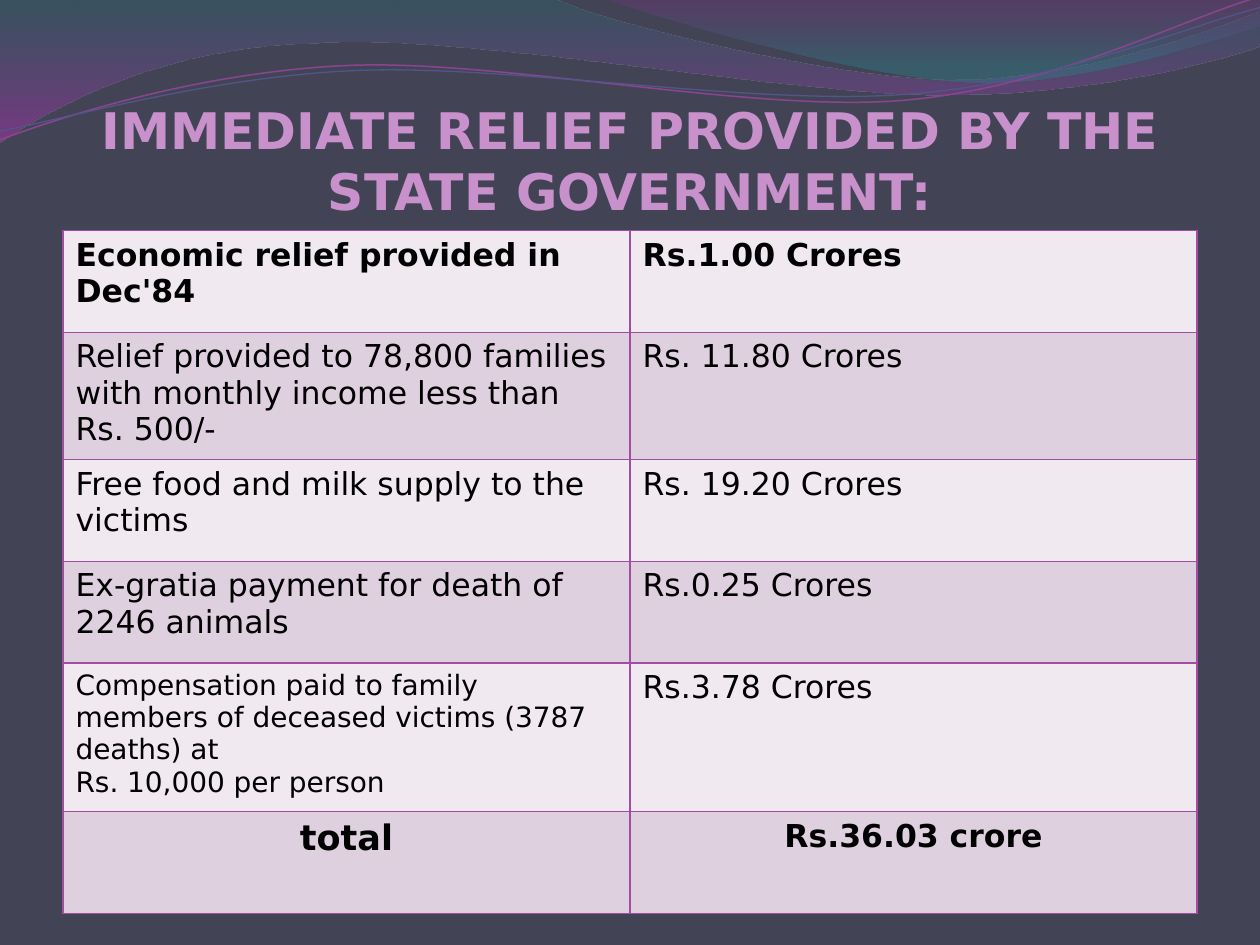
"""Build a slide with a table of the relief paid by the state government."""
from lxml.etree import SubElement
from pptx import Presentation
from pptx.dml.color import RGBColor
from pptx.enum.text import MSO_ANCHOR as Anchor, MSO_AUTO_SIZE as AutoSize, PP_ALIGN as Align
from pptx.oxml.ns import qn
from pptx.util import Inches, Pt

THEME = dict(
    font="DejaVu Sans", background="424456", title="C991CB", text="000000",
    border="A04DA3", bands=("F0E9F0", "DFD0E0"),
    title_size=28.8, body_size=18, small_size=16, total_size=20,
)
TITLE = "IMMEDIATE RELIEF PROVIDED BY THE STATE GOVERNMENT:"
RELIEF = [
    ("Economic relief provided in Dec'84", "Rs.1.00 Crores"),
    ("Relief provided to 78,800 families with monthly income less than Rs. 500/-", "Rs. 11.80 Crores"),
    ("Free food and milk supply to the victims", "Rs. 19.20 Crores"),
    ("Ex-gratia payment for death of 2246 animals", "Rs.0.25 Crores"),
    ("Compensation paid to family members of deceased victims (3787 deaths) at \vRs. 10,000 per person",
     "Rs.3.78 Crores"),
    ("total", "Rs.36.03 crore"),
]
TABLE_HEIGHT = 5.42
TALL_ROWS = {1: 1.01, 4: 1.18}
FIRST_COLUMN_SIZES = {4: THEME["small_size"], 5: THEME["total_size"]}

BANDS = [
    dict(segments=[(0, 0), (4.4, -0.01),
                   (4.76, 0.17, 6.64, 0.63, 7.58, 0.63), (8.53, 0.63, 9.58, 0.26, 10, 0.09),
                   (10.01, 0.36), (9.83, 0.44, 8.7, 0.76, 7.46, 0.75),
                   (6.22, 0.75, 3.82, 0.28, 2.57, 0.34), (1.29, 0.36, 0.46, 0.83, -0.01, 1.13)],
         stops=[(0, "2D6368", 45), (1, "A530A9", 55)]),
    dict(segments=[(4.79, -0.01), (5.09, 0.11, 6.82, 0.62, 7.69, 0.65),
                   (8.56, 0.69, 9.61, 0.32, 10, 0.21), (10, 0)],
         stops=[(0, "7F2F82", 30), (0.8, "2F7B82", 45)]),
]
STRANDS = [
    dict(segments=[(0, 1.11), (0.48, 0.93, 1.58, 0.57, 2.77, 0.52),
                   (3.95, 0.47, 5.93, 0.89, 7.13, 0.8), (8.33, 0.71, 9.38, 0.15, 9.98, -0.02)],
         color="8D4490", width=0.85),
    dict(segments=[(0, 1.04), (0.47, 0.96, 1.64, 0.61, 2.83, 0.56),
                   (4.03, 0.51, 5.97, 0.84, 7.17, 0.75), (8.36, 0.67, 9.41, 0.21, 10, 0.06)],
         color="53548A", width=0.75),
]


def rgb(name):
    return RGBColor.from_string(name)


def write_text(text_frame, text, size, color=THEME["text"], bold=False, align=Align.LEFT):
    paragraph = text_frame.paragraphs[0]
    paragraph.text = text
    paragraph.alignment = align
    for run in paragraph.runs:
        run.font.name = THEME["font"]
        run.font.size = Pt(size)
        run.font.bold = bold
        run.font.color.rgb = rgb(color)


def add_curve(slide, segments, closed):
    anchors = [(Inches(segment[-2]), Inches(segment[-1])) for segment in segments]
    builder = slide.shapes.build_freeform(*anchors[0])
    builder.add_line_segments(anchors[1:], close=closed)
    shape = builder.convert_to_shape()
    shape.shadow.inherit = False
    lines = list(shape.element.spPr.iter(qn("a:lnTo")))
    for line, segment in zip(lines, segments[1:]):
        if len(segment) == 6:
            curve = line.getparent().makeelement(qn("a:cubicBezTo"))
            for x, y in zip(segment[::2], segment[1::2]):
                SubElement(curve, qn("a:pt"), x=str(Inches(x) - shape.left), y=str(Inches(y) - shape.top))
            line.getparent().replace(line, curve)
    return shape


def add_band(slide, segments, stops):
    shape = add_curve(slide, segments, closed=True)
    shape.line.fill.background()
    shape.fill.gradient()
    shape.fill.gradient_angle = 270
    for stop, (position, color, opacity) in zip(shape.fill.gradient_stops, stops):
        stop.position = position
        stop.color.rgb = rgb(color)
    colors = shape.element.spPr.find(qn("a:gradFill")).iter(qn("a:srgbClr"))
    for color_element, (position, color, opacity) in zip(colors, stops):
        SubElement(color_element, qn("a:alpha"), val=str(opacity * 1000))


def add_strand(slide, segments, color, width):
    shape = add_curve(slide, segments, closed=False)
    shape.fill.background()
    shape.line.color.rgb = rgb(color)
    shape.line.width = Pt(width)


def fill_cell(cell, color):
    properties = cell._tc.get_or_add_tcPr()
    for side in ("lnL", "lnR", "lnT", "lnB"):
        line = SubElement(properties, qn(f"a:{side}"), w=str(Pt(1)))
        solid = SubElement(line, qn("a:solidFill"))
        SubElement(solid, qn("a:srgbClr"), val=THEME["border"])
    cell.fill.solid()
    cell.fill.fore_color.rgb = rgb(color)


def add_title(slide):
    title = slide.shapes.title
    title.left, title.top, title.width, title.height = map(Inches, (0.5, 0.77, 9, 0.98))
    frame = title.text_frame
    frame.word_wrap = True
    frame.auto_size = AutoSize.NONE
    frame.vertical_anchor = Anchor.BOTTOM
    frame.margin_left = frame.margin_right = frame.margin_bottom = 0
    frame.margin_top = Inches(0.05)
    write_text(frame, TITLE, THEME["title_size"], THEME["title"], bold=True, align=Align.CENTER)
    slide.shapes._spTree.append(title.element)


def add_relief_table(slide):
    table = slide.shapes.add_table(
        len(RELIEF), 2, Inches(0.5), Inches(1.83), Inches(9), Inches(TABLE_HEIGHT)).table
    last = len(RELIEF) - 1
    short_row = (TABLE_HEIGHT - sum(TALL_ROWS.values())) / (len(RELIEF) - len(TALL_ROWS))
    for row, values in enumerate(RELIEF):
        table.rows[row].height = Inches(TALL_ROWS.get(row, short_row))
        for column, value in enumerate(values):
            cell = table.cell(row, column)
            size = THEME["body_size"] if column else FIRST_COLUMN_SIZES.get(row, THEME["body_size"])
            fill_cell(cell, THEME["bands"][row % 2])
            write_text(cell.text_frame, value, size, bold=row in (0, last),
                       align=Align.CENTER if row == last else Align.LEFT)


def main():
    presentation = Presentation()
    presentation.slide_width, presentation.slide_height = Inches(10), Inches(7.5)
    slide = presentation.slides.add_slide(presentation.slide_layouts[5])
    slide.background.fill.solid()
    slide.background.fill.fore_color.rgb = rgb(THEME["background"])
    for band in BANDS:
        add_band(slide, **band)
    for strand in STRANDS:
        add_strand(slide, **strand)
    add_title(slide)
    add_relief_table(slide)
    presentation.save("out.pptx")


if __name__ == "__main__":
    main()
